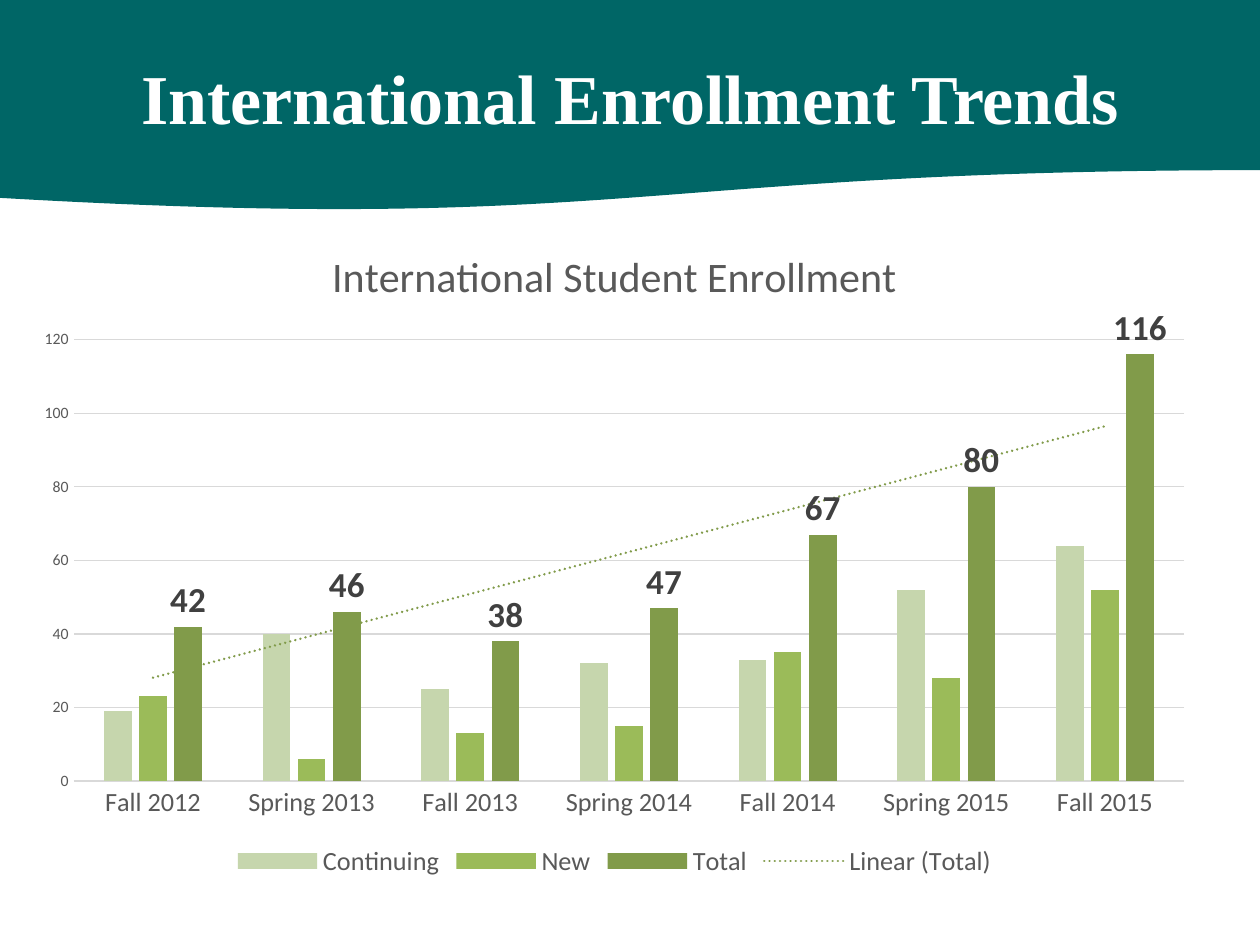
from dataclasses import dataclass

from lxml import etree
from pptx import Presentation
from pptx import util as u
from pptx.chart import data as chart_data
from pptx.dml import color as dml
from pptx.enum import chart as charts, dml as lines, shapes, text
from pptx.oxml import ns

EMU_PER_PX = 914400 / 126
COLORS = {
    "teal": "006666",
    "white": "FFFFFF",
    "grid": "D9D9D9",
    "muted": "595959",
    "label": "404040",
    "pale": "C6D6AD",
    "green": "9BBB59",
    "olive": "819B4A",
}
SEMESTERS = ["Fall 2012", "Spring 2013", "Fall 2013", "Spring 2014",
             "Fall 2014", "Spring 2015", "Fall 2015"]


@dataclass(frozen=True)
class Box:
    left: int
    top: int
    width: int
    height: int

    def emu(self) -> tuple[int, ...]:
        return tuple(px(side) for side in (self.left, self.top, self.width, self.height))


@dataclass(frozen=True)
class Enrollment:
    name: str
    values: tuple[int, ...]
    color: str
    is_total: bool = False


ENROLLMENTS = [
    Enrollment("Continuing", (19, 40, 25, 32, 33, 52, 64), "pale"),
    Enrollment("New", (23, 6, 13, 15, 35, 28, 52), "green"),
    Enrollment("Total", (42, 46, 38, 47, 67, 80, 116), "olive", True),
]


def px(length: int) -> int:
    return round(length * EMU_PER_PX)


def rgb(name: str) -> dml.RGBColor:
    return dml.RGBColor.from_string(COLORS[name])


def set_font(font, size: int, color: str, bold: bool = False, name: str = "Calibri") -> None:
    font.name = name
    font.size = u.Pt(size)
    font.bold = bold
    font.color.rgb = rgb(color)


def set_line(line, color: str, width: float) -> None:
    line.color.rgb = rgb(color)
    line.width = u.Pt(width)


def add_banner(slide, box: Box) -> None:
    shape = slide.shapes.add_shape(shapes.MSO_SHAPE.FLOWCHART_DOCUMENT, *box.emu())
    shape.shadow.inherit = False
    shape.fill.solid()
    shape.fill.fore_color.rgb = rgb("teal")
    set_line(shape.line, "teal", 2)


def add_heading(slide, box: Box, words: str) -> None:
    frame = slide.shapes.add_textbox(*box.emu()).text_frame
    frame.word_wrap = True
    frame.vertical_anchor = text.MSO_ANCHOR.MIDDLE
    frame.margin_left = frame.margin_right = px(5)
    frame.margin_top = frame.margin_bottom = px(5)
    paragraph = frame.paragraphs[0]
    paragraph.alignment = text.PP_ALIGN.CENTER
    run = paragraph.add_run()
    run.text = words
    set_font(run.font, 40, "white", True, "Times New Roman")


def add_trendline(series, color: str) -> None:
    trendline = etree.Element(ns.qn("c:trendline"))
    properties = etree.SubElement(trendline, ns.qn("c:spPr"))
    line = etree.SubElement(properties, ns.qn("a:ln"), w=str(u.Pt(1.5)), cap="rnd")
    fill = etree.SubElement(line, ns.qn("a:solidFill"))
    etree.SubElement(fill, ns.qn("a:srgbClr"), val=COLORS[color])
    etree.SubElement(line, ns.qn("a:prstDash"), val="sysDot")
    for tag, value in (("trendlineType", "linear"), ("dispRSqr", "0"), ("dispEq", "0")):
        etree.SubElement(trendline, ns.qn(f"c:{tag}"), val=value)
    series._element.find(ns.qn("c:cat")).addprevious(trendline)


def style_series(series, enrollment: Enrollment) -> None:
    series.format.fill.solid()
    series.format.fill.fore_color.rgb = rgb(enrollment.color)
    series.invert_if_negative = False
    if enrollment.is_total:
        labels = series.data_labels
        labels.show_value = True
        labels.position = charts.XL_LABEL_POSITION.OUTSIDE_END
        set_font(labels.font, 20, "label", True)
        add_trendline(series, enrollment.color)


def style_axes(chart) -> None:
    category_axis, value_axis = chart.category_axis, chart.value_axis
    for axis, size in ((category_axis, 15), (value_axis, 9)):
        axis.major_tick_mark = axis.minor_tick_mark = charts.XL_TICK_MARK.NONE
        set_font(axis.tick_labels.font, size, "muted")
    set_line(category_axis.format.line, "grid", 0.75)
    value_axis.format.line.fill.background()
    value_axis.minimum_scale, value_axis.maximum_scale = 0, 120
    value_axis.major_unit = 20
    gridlines = value_axis.major_gridlines.format.line
    set_line(gridlines, "grid", 0.75)
    gridlines.dash_style = lines.MSO_LINE.SOLID


def add_enrollment_chart(slide, box: Box, title: str) -> None:
    data = chart_data.CategoryChartData()
    data.categories = SEMESTERS
    for enrollment in ENROLLMENTS:
        data.add_series(enrollment.name, enrollment.values)
    chart = slide.shapes.add_chart(
        charts.XL_CHART_TYPE.COLUMN_CLUSTERED, *box.emu(), data).chart
    set_font(chart.font, 10, "muted")
    chart.has_title = True
    run = chart.chart_title.text_frame.paragraphs[0].add_run()
    run.text = title
    set_font(run.font, 24, "muted")
    chart.chart_title.include_in_layout = False
    chart.has_legend = True
    chart.legend.position = charts.XL_LEGEND_POSITION.BOTTOM
    chart.legend.include_in_layout = False
    set_font(chart.legend.font, 15, "muted")
    plot = chart.plots[0]
    plot.gap_width = 219
    plot.overlap = -27
    plot.vary_by_categories = False
    style_axes(chart)
    for series, enrollment in zip(plot.series, ENROLLMENTS):
        style_series(series, enrollment)


def main() -> None:
    presentation = Presentation()
    presentation.slide_width, presentation.slide_height = px(1260), px(945)
    slide = presentation.slides.add_slide(presentation.slide_layouts[6])
    add_banner(slide, Box(0, 0, 1260, 210))
    add_heading(slide, Box(63, 42, 1134, 108), "International Enrollment Trends")
    add_enrollment_chart(slide, Box(21, 221, 1187, 661), "International Student Enrollment")
    presentation.save("out.pptx")


if __name__ == "__main__":
    main()
